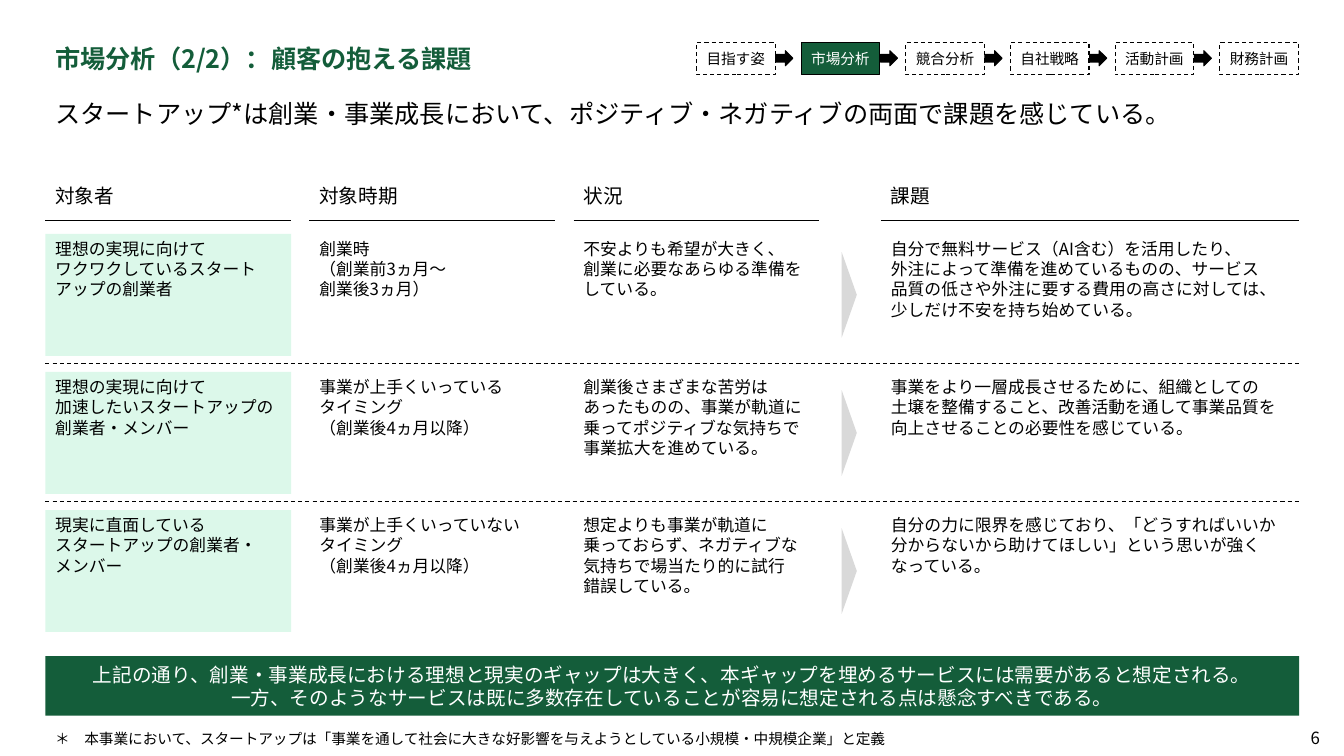
"""Build the market analysis slide on the problems customers face."""
import pptx
import pptx.dml.color
import pptx.enum.dml
import pptx.enum.shapes
import pptx.enum.text
import pptx.oxml
import pptx.oxml.ns
import pptx.util

Pt = pptx.util.Pt
Shape = pptx.enum.shapes.MSO_SHAPE
Anchor = pptx.enum.text.MSO_ANCHOR
Align = pptx.enum.text.PP_ALIGN
DASH = pptx.enum.dml.MSO_LINE.DASH

FONT = "Noto Sans CJK JP"
GREEN = pptx.dml.color.RGBColor(0x14, 0x5D, 0x3A)
MINT = pptx.dml.color.RGBColor(0xDC, 0xF8, 0xEA)
GREY = pptx.dml.color.RGBColor(0xD9, 0xD9, 0xD9)
BLACK = pptx.dml.color.RGBColor(0, 0, 0)
WHITE = pptx.dml.color.RGBColor(0xFF, 0xFF, 0xFF)

LEFT, WIDTH = 32.4, 895.7
ROW_TOP, ROW_STEP, ROW_HEIGHT = 167.04, 98.64, 87.12

deck = pptx.Presentation()
deck.slide_width, deck.slide_height = Pt(960), Pt(540)
page = deck.slides.add_slide(deck.slide_layouts[6])


def add_box(bounds, paragraphs=(), size=12, color=BLACK, anchor=Anchor.MIDDLE,
            align=Align.LEFT, bold=False, preset=None, fill=None):
    """Add a text box, or a preset shape without outline, and set its text."""
    bounds = [Pt(length) for length in bounds]
    if preset is None:
        box = page.shapes.add_textbox(*bounds)
    else:
        box = page.shapes.add_shape(preset, *bounds)
        box.shadow.inherit = False
        box.line.fill.background()
        box.fill.background()
        if fill is not None:
            box.fill.solid()
            box.fill.fore_color.rgb = fill
    frame = box.text_frame
    frame.word_wrap = True
    frame.vertical_anchor = anchor
    for index, text in enumerate(paragraphs):
        para = frame.add_paragraph() if index else frame.paragraphs[0]
        para.text = text
        para.alignment = align
        para.line_spacing = Pt(size * 1.2)
        para.font.size = Pt(size)
        para.font.bold = bold
        para.font.color.rgb = color
        para.font.name = FONT
        for span in para.runs:
            properties = span._r.get_or_add_rPr()
            east_asian = pptx.oxml.parse_xml(
                f'<a:ea {pptx.oxml.ns.nsdecls("a")} typeface="{FONT}"/>')
            properties.append(east_asian)
    return box


def add_rule(left, top, width, dash=None):
    """Add a thin black horizontal line."""
    rule = page.shapes.add_connector(pptx.enum.shapes.MSO_CONNECTOR.STRAIGHT,
                                     Pt(left), Pt(top), Pt(left + width), Pt(top))
    rule.line.color.rgb = BLACK
    rule.line.width = Pt(0.75)
    if dash is not None:
        rule.line.dash_style = dash
    rule._element.spPr.append(
        pptx.oxml.parse_xml(f'<a:effectLst {pptx.oxml.ns.nsdecls("a")}/>'))


add_box((LEFT, 23.04, 450, 36.72), ["市場分析（2/2）：顧客の抱える課題"],
        size=18, color=GREEN, bold=True)
add_box((LEFT, 66.96, WIDTH, 36.72),
        ["スタートアップ*は創業・事業成長において、ポジティブ・ネガティブの両面で課題を感じている。"],
        size=18, anchor=Anchor.TOP)

steps = ["目指す姿", "市場分析", "競合分析", "自社戦略", "活動計画", "財務計画"]
for index, step in enumerate(steps):
    step_left = 497.52 + index * 74.74
    current = step == "市場分析"
    step_box = add_box((step_left, 30.24, 56.16, 23.04), [step], size=10.5,
                       color=WHITE if current else BLACK, align=Align.CENTER,
                       preset=Shape.RECTANGLE, fill=GREEN if current else None)
    step_box.text_frame.margin_left = step_box.text_frame.margin_right = 0
    outlined = [step_box]
    if index < len(steps) - 1:
        outlined.append(add_box((step_left + 56.6, 36.2, 12.24, 10.8),
                                preset=Shape.RIGHT_ARROW, fill=BLACK))
    for shape in outlined:
        shape.line.color.rgb = BLACK
        shape.line.width = Pt(0.75)
    if not current:
        step_box.line.dash_style = DASH

columns = [
    ("対象者", LEFT, 175.68, [
        ["理想の実現に向けて", "ワクワクしているスタート", "アップの創業者"],
        ["理想の実現に向けて", "加速したいスタートアップの", "創業者・メンバー"],
        ["現実に直面している", "スタートアップの創業者・", "メンバー"],
    ]),
    ("対象時期", 221.04, 175.68, [
        ["創業時", "（創業前3ヵ月～", "創業後3ヵ月）"],
        ["事業が上手くいっている", "タイミング", "（創業後4ヵ月以降）"],
        ["事業が上手くいっていない", "タイミング", "（創業後4ヵ月以降）"],
    ]),
    ("状況", 409.68, 175.68, [
        ["不安よりも希望が大きく、", "創業に必要なあらゆる準備を", "している。"],
        ["創業後さまざまな苦労は", "あったものの、事業が軌道に",
         "乗ってポジティブな気持ちで", "事業拡大を進めている。"],
        ["想定よりも事業が軌道に", "乗っておらず、ネガティブな",
         "気持ちで場当たり的に試行", "錯誤している。"],
    ]),
    ("課題", 629.28, 298.8, [
        ["自分で無料サービス（AI含む）を活用したり、",
         "外注によって準備を進めているものの、サービス",
         "品質の低さや外注に要する費用の高さに対しては、\n少しだけ不安を持ち始めている。"],
        ["事業をより一層成長させるために、組織としての",
         "土壌を整備すること、改善活動を通して事業品質を",
         "向上させることの必要性を感じている。"],
        ["自分の力に限界を感じており、「どうすればいいか",
         "分からないから助けてほしい」という思いが強く", "なっている。"],
    ]),
]
for heading, column_left, column_width, cells in columns:
    add_box((column_left, 128.88, column_width, 21.6), [heading], size=14)
    add_rule(column_left, 157.68, column_width)
    first = heading == "対象者"
    for row, lines in enumerate(cells):
        add_box((column_left, ROW_TOP + row * ROW_STEP, column_width, ROW_HEIGHT),
                lines, anchor=Anchor.TOP,
                preset=Shape.RECTANGLE if first else None,
                fill=MINT if first else None)

for row in range(3):
    pointer = add_box((576, 205.2 + row * ROW_STEP, 61.2, 10.8),
                      preset=Shape.ISOSCELES_TRIANGLE, fill=GREY)
    pointer.rotation = 90
for row in range(2):
    add_rule(LEFT, 259.92 + row * ROW_STEP, WIDTH, DASH)

add_box((LEFT, 468.72, WIDTH, 42.48),
        ["上記の通り、創業・事業成長における理想と現実のギャップは大きく、"
         "本ギャップを埋めるサービスには需要があると想定される。\n"
         "一方、そのようなサービスは既に多数存在していることが容易に想定される点は懸念すべきである。"],
        size=14, color=WHITE, align=Align.CENTER, preset=Shape.RECTANGLE, fill=GREEN)
add_box((LEFT, 519.12, WIDTH, 17.28),
        ["＊　本事業において、スタートアップは「事業を通して社会に大きな好影響を"
         "与えようとしている小規模・中規模企業」と定義"], size=10.5)
page_number = add_box((928.8, 518.4, 21.6, 17.28), ["6"], align=Align.CENTER)
page_number.text_frame.word_wrap = False

deck.save("out.pptx")
